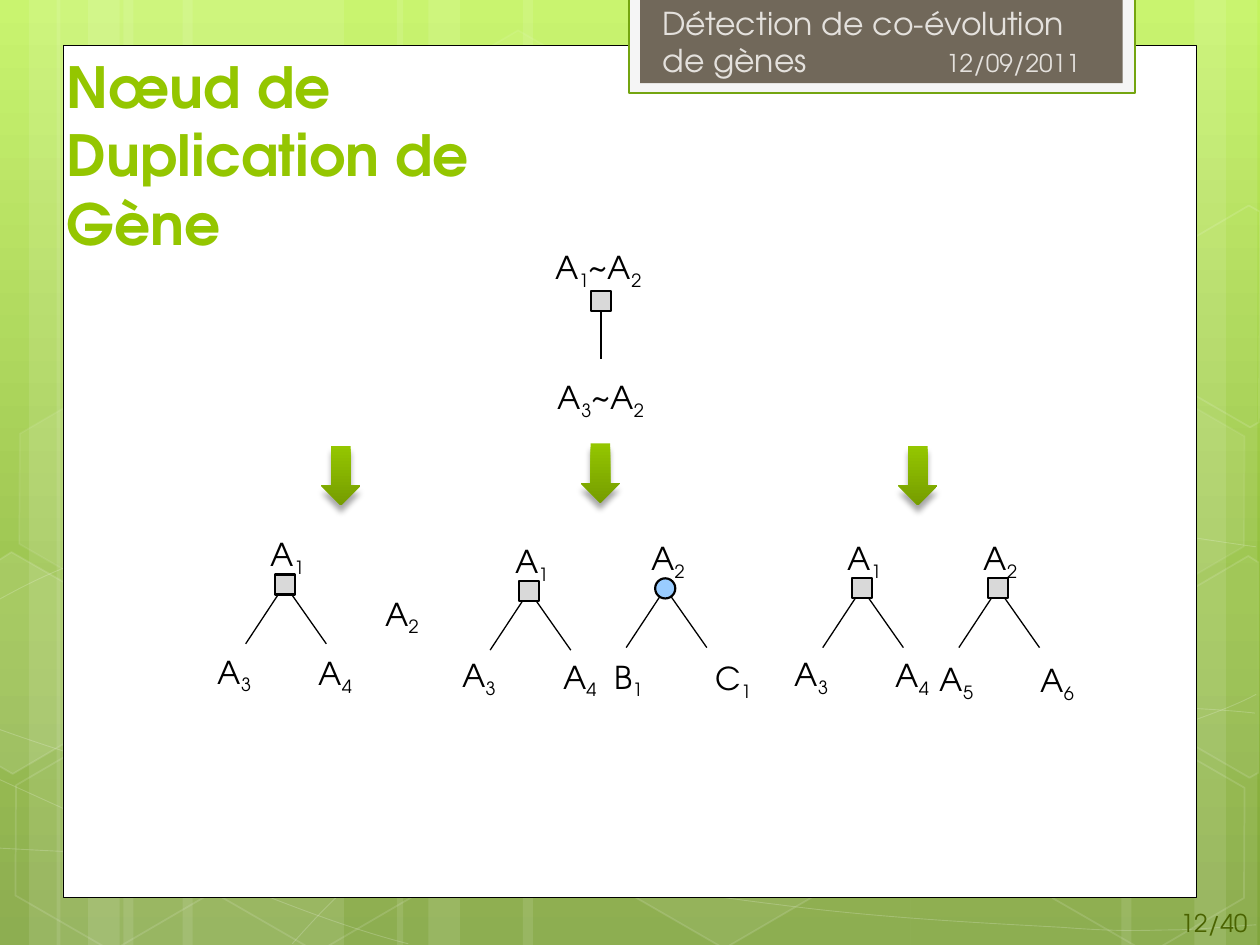
from itertools import groupby
from math import cos, radians, sin

from lxml import etree
from pptx import Presentation
from pptx.dml.color import RGBColor
from pptx.enum.shapes import MSO_CONNECTOR, MSO_SHAPE
from pptx.enum.text import MSO_ANCHOR, MSO_AUTO_SIZE, PP_ALIGN
from pptx.oxml.ns import qn
from pptx.util import Inches, Pt

RECT, OVAL, HEXAGON = MSO_SHAPE.RECTANGLE, MSO_SHAPE.OVAL, MSO_SHAPE.HEXAGON
DOWN_ARROW, STRAIGHT = MSO_SHAPE.DOWN_ARROW, MSO_CONNECTOR.STRAIGHT

FONT = "TeX Gyre Adventor"
C = {"white": "FFFFFF", "black": "000000", "title": "94C600", "node": "D9D9D9",
     "loss": "99CCFF", "frame": "F5F5F5", "frame_line": "74A510", "header": "71685A",
     "header_text": "E4E1DD", "page": "4A6300"}
BACK_STOPS = [(0, "C3F35F"), (62, "93BF3F"), (100, "81A53E")]
ARROW_STOPS = [(0, "94C600"), (100, "769D00")]

# The slide is a grid of 10 columns by 7.5 rows.
COLS, ROWS = 10, 7.5
W, H = Inches(10), Inches(7.5)
COL, ROW = W / COLS, H / ROWS
TILT = 30

STRIPES = [(0.98, 1.75), (-0.02, 0.5), (0.23, 0.83), (1.45, 1.75), (0.45, 0.5), (0.7, 0.83),
           (7.23, 1.75), (9.48, 0.5), (8.9, 0.83), (4.15, 3.08), (3.15, 0.5), (3.4, 0.83)]
# Each curve is a start point followed by cubic segments of three points.
CURVES = [
    [(-0.03, 6.73), (0.51, 6.76), (1.05, 6.79), (1.8, 6.78), (2.55, 6.77), (3.48, 6.75),
     (4.48, 6.65), (5.48, 6.55), (6.9, 6.36), (7.82, 6.17), (8.73, 5.98), (9.67, 5.68),
     (9.97, 5.51)],
    [(-0.03, 4.77), (0.26, 4.61), (0.55, 4.46), (1.11, 4.31), (1.68, 4.16), (2.49, 3.94),
     (3.37, 3.87), (4.26, 3.8), (5.34, 3.79), (6.44, 3.87), (7.54, 3.95), (9.37, 4.26),
     (9.97, 4.34)],
    [(-0.04, 6.17), (1.17, 6.72), (2.37, 7.27), (3.24, 7.49)],
    [(-0.03, 5.78), (0.28, 5.89), (0.6, 6), (1.18, 6.16), (1.76, 6.31), (2.63, 6.56),
     (3.47, 6.73), (4.3, 6.9), (5.35, 7.08), (6.18, 7.18), (7.01, 7.29), (7.9, 7.33),
     (8.43, 7.36), (8.95, 7.4), (9.09, 7.38), (9.35, 7.38), (9.61, 7.37), (9.79, 7.35),
     (9.97, 7.34)],
    [(2.32, 7.49), (2.5, 7.29), (2.68, 7.09), (2.92, 6.91), (3.16, 6.73), (3.5, 6.53),
     (3.78, 6.39), (4.06, 6.25), (4.23, 6.19), (4.59, 6.09), (4.96, 5.99), (5.63, 5.85),
     (5.98, 5.78), (6.34, 5.71), (6.39, 5.71), (6.7, 5.69), (7.01, 5.66), (7.5, 5.63),
     (7.84, 5.62), (8.19, 5.61), (8.76, 5.62), (8.76, 5.62), (8.98, 5.62), (9.21, 5.62),
     (9.43, 5.62), (9.61, 5.63), (9.78, 5.64), (9.96, 5.66)],
]
# Left, top, fill opacity, line opacity
HEXAGONS = [(3.24, 0.36, 4, 8), (4.87, 5.89, 6, 12), (0.01, 5.91, 0, 12), (0.04, 3.12, 7, 8),
            (1.64, 5.92, 0, 12), (8.24, 5.93, 0, 12), (8.24, 3.14, 7, 8)]
# Centre, corners and fill opacity of the hexagons cut by the slide's edge
CUT_HEXAGONS = [
    ((0.26, 5.35), [(-0.02, 4.45), (0.09, 4.38), (0.86, 4.82), (0.85, 5.7), (0.1, 6.14),
                    (-0.02, 6.07)], 10),
    ((9.75, 5.2), [(9.16, 4.85), (9.91, 4.41), (9.99, 4.46), (9.99, 6.13), (9.92, 6.17),
                   (9.16, 5.73)], 4),
    ((9.75, 2.41), [(9.16, 2.07), (9.91, 1.63), (10, 1.68), (9.99, 3.35), (9.92, 3.39),
                    (9.16, 2.95)], 0),
]
LABEL_WIDTHS = {"B1": 0.44, "C1": 0.5}
# Node centre, shape, root and leaf names, offset of the first leaf label
TREES = [
    (2.26, 4.64, RECT, ("A1", "A3", "A4"), (-0.63, 0.49)),
    (4.2, 4.69, RECT, ("A1", "A3", "A4"), (-0.63, 0.47)),
    (5.28, 4.67, OVAL, ("A2", "B1", "C1"), (-0.5, 0.5)),
    (6.84, 4.67, RECT, ("A1", "A3", "A4"), (-0.63, 0.48)),
    (7.92, 4.67, RECT, ("A2", "A5", "A6"), (-0.56, 0.52)),
]
ARROWS = [(2.55, 3.54), (4.61, 3.52), (7.13, 3.54)]


def grid(x, y, w, h):
    return int(x * COL), int(y * ROW), int(w * COL), int(h * ROW)


def paint(sp, fill=None, line=None, width=1, fill_alpha=100, line_alpha=100):
    sp.shadow.inherit = False
    for part, color in ((sp.fill, fill), (sp.line.fill, line)):
        if color:
            part.solid()
            part.fore_color.rgb = RGBColor.from_string(C[color])
        else:
            part.background()
    if line:
        sp.line.width = Pt(width)
    for where, alpha in (("./a:solidFill", fill_alpha), ("./a:ln/a:solidFill", line_alpha)):
        for clr in sp.element.spPr.xpath(where + "/a:srgbClr"):
            if alpha < 100:
                etree.SubElement(clr, qn("a:alpha"), val=str(alpha * 1000))


def shade(fill, owner, stops):
    """Fill with a top-down gradient; owner is the XML element that holds it."""
    fill.gradient()
    fill.gradient_angle = 270
    stop_list = owner.xpath(".//a:gsLst")[0]
    stop_list[:] = []
    for pos, color in stops:
        gs = etree.SubElement(stop_list, qn("a:gs"), pos=str(pos * 1000))
        etree.SubElement(gs, qn("a:srgbClr"), val=color)


def shape(s, kind, box, **look):
    sp = s.shapes.add_shape(kind, *grid(*box))
    paint(sp, **look)
    return sp


def outline(s, points, close, **look):
    start, *rest = [(int(x * COL), int(y * ROW)) for x, y in points]
    builder = s.shapes.build_freeform(*start)
    builder.add_line_segments(rest, close=close)
    sp = builder.convert_to_shape()
    paint(sp, **look)
    return sp


def curve(s, points, **look):
    """Open outline whose points after the first are cubic segments."""
    sp = outline(s, points, False, **look)
    lines = sp.element.spPr.xpath(".//a:lnTo")
    for i in range(0, len(lines), 3):
        segment = etree.SubElement(lines[i].getparent(), qn("a:cubicBezTo"))
        for line in lines[i:i + 3]:
            segment.append(line[0])
            line.getparent().remove(line)


def turned(points, centre, degrees):
    cx, cy = centre
    c, d = cos(radians(degrees)), sin(radians(degrees))
    return [(cx + (x - cx) * c - (y - cy) * d, cy + (x - cx) * d + (y - cy) * c)
            for x, y in points]


def add_run(p, text, color, size, bold=False):
    r = p.add_run()
    r.text = text
    for name, value in {"name": FONT, "size": Pt(size), "bold": bold}.items():
        setattr(r.font, name, value)
    r.font.color.rgb = RGBColor.from_string(C[color])
    return r


def text_box(s, box, wrap=True):
    tf = s.shapes.add_textbox(*grid(*box)).text_frame
    tf.word_wrap = wrap
    tf.auto_size = MSO_AUTO_SIZE.SHAPE_TO_FIT_TEXT
    return tf.paragraphs[0]


def label(s, x, y, name, width=0.48):
    """Gene name whose digits are set as subscripts."""
    p = text_box(s, (x, y, LABEL_WIDTHS.get(name, width), 0.4), wrap=False)
    for is_digit, chars in groupby(name, str.isdigit):
        r = add_run(p, "".join(chars), "black", 18)
        if is_digit:
            r.font._element.set("baseline", "-25000")


def branch(s, x1, y1, x2, y2):
    line = s.shapes.add_connector(STRAIGHT, *grid(x1, y1, x2, y2))
    line.line.color.rgb = RGBColor.from_string(C["black"])
    line.line.width = Pt(0.75)
    etree.SubElement(line.element.spPr, qn("a:effectLst"))


def node(s, x, y, kind=RECT):
    shape(s, kind, (x - 0.08, y - 0.08, 0.16, 0.16),
          fill="loss" if kind == OVAL else "node", line="black", width=1.25)


def backdrop(s):
    shade(s.background.fill, s.element, BACK_STOPS)
    for x, w in STRIPES:
        shape(s, RECT, (x, 0, w, ROWS), fill="white", fill_alpha=10)
    for points in CURVES:
        curve(s, points, line="white", width=0.5, line_alpha=20)
    for x, y, fill_alpha, line_alpha in HEXAGONS:
        sp = shape(s, HEXAGON, (x, y, 1.75, 1.52), fill="white" if fill_alpha else None,
                   line="white", fill_alpha=fill_alpha, line_alpha=line_alpha)
        sp.rotation = TILT
        sp.adjustments[0] = 0.285
    for centre, corners, fill_alpha in CUT_HEXAGONS:
        sp = outline(s, turned(corners, centre, -TILT), True, line="white", line_alpha=12,
                     fill="white" if fill_alpha else None, fill_alpha=fill_alpha)
        sp.rotation = TILT
    shape(s, RECT, (0.5, 0.36, 9, 6.76), fill="white", line="black", width=0.5)


def header(s, x, y):
    shape(s, RECT, (x, y, 4.02, 0.76), fill="frame", line="frame_line", width=1.25)
    shape(s, RECT, (x + 0.09, y, 3.83, 0.68), fill="header")
    p = text_box(s, (x + 0.17, y, 3.72, 0.71))
    tabs = etree.SubElement(p._p.get_or_add_pPr(), qn("a:tabLst"))
    etree.SubElement(tabs, qn("a:tab"), pos=str(int(2.25 * COL)), algn="l")
    add_run(p, "Détection de co-évolution de gènes\t", "header_text", 18)
    add_run(p, "12/09/2011", "header_text", 14)


def page_number(s, box):
    p = text_box(s, box)
    p.alignment = PP_ALIGN.RIGHT
    add_run(p, "12/40", "page", 14)


def title(s, box):
    sp = s.shapes.title
    sp.element.getparent().append(sp.element)  # in front of the white panel
    sp.left, sp.top, sp.width, sp.height = grid(*box)
    tf = sp.text_frame
    tf.word_wrap, tf.auto_size = True, MSO_AUTO_SIZE.NONE
    tf.vertical_anchor = MSO_ANCHOR.MIDDLE
    p = tf.paragraphs[0]
    p.alignment = PP_ALIGN.LEFT
    add_run(p, "Nœud de Duplication de Gène", "title", 32.4, bold=True)


def gene_pair(s, x, y):
    """Pair of genes above its descendant pair, around the node centre."""
    branch(s, x, y, x, y + 0.46)
    node(s, x, y)
    label(s, x - 0.46, y - 0.47, "A1~A2", 0.92)
    label(s, x - 0.44, y + 0.56, "A3~A2", 0.92)


def arrow(s, x, y):
    sp = shape(s, DOWN_ARROW, (x, y, 0.31, 0.47))
    shade(sp.fill, sp.element.spPr, ARROW_STOPS)
    effects = sp.element.spPr.find(qn("a:effectLst"))
    shadow = etree.SubElement(effects, qn("a:outerShdw"), blurRad=str(Pt(3.5)),
                              dist=str(Pt(4)), dir="5400000", rotWithShape="0")
    clr = etree.SubElement(shadow, qn("a:srgbClr"), val=C["black"])
    etree.SubElement(clr, qn("a:alpha"), val="34000")


def tree(s, x, y, kind, names, leaf):
    """Node at (x, y) with a root label above and two leaf labels below."""
    root, left, right = names
    dx, dy = leaf
    for reach in (-0.31, 0.33):
        branch(s, x, y, x + reach, y + 0.47)
    node(s, x, y, kind)
    label(s, x - 0.21, y - 0.44, root)
    label(s, x + dx, y + dy, left)
    label(s, x + dx + 0.8, y + dy + 0.01, right)


def main():
    prs = Presentation()
    prs.slide_width, prs.slide_height = W, H
    s = prs.slides.add_slide(prs.slide_layouts[5])
    backdrop(s)
    header(s, 4.99, -0.02)
    page_number(s, (9.01, 7.16, 0.99, 0.34))
    title(s, (0.43, 0.36, 4.66, 1.73))
    gene_pair(s, 4.77, 2.39)
    for place in ARROWS:
        arrow(s, *place)
    for parts in TREES:
        tree(s, *parts)
    label(s, 2.96, 4.67, "A2")
    prs.save("out.pptx")


if __name__ == "__main__":
    main()
